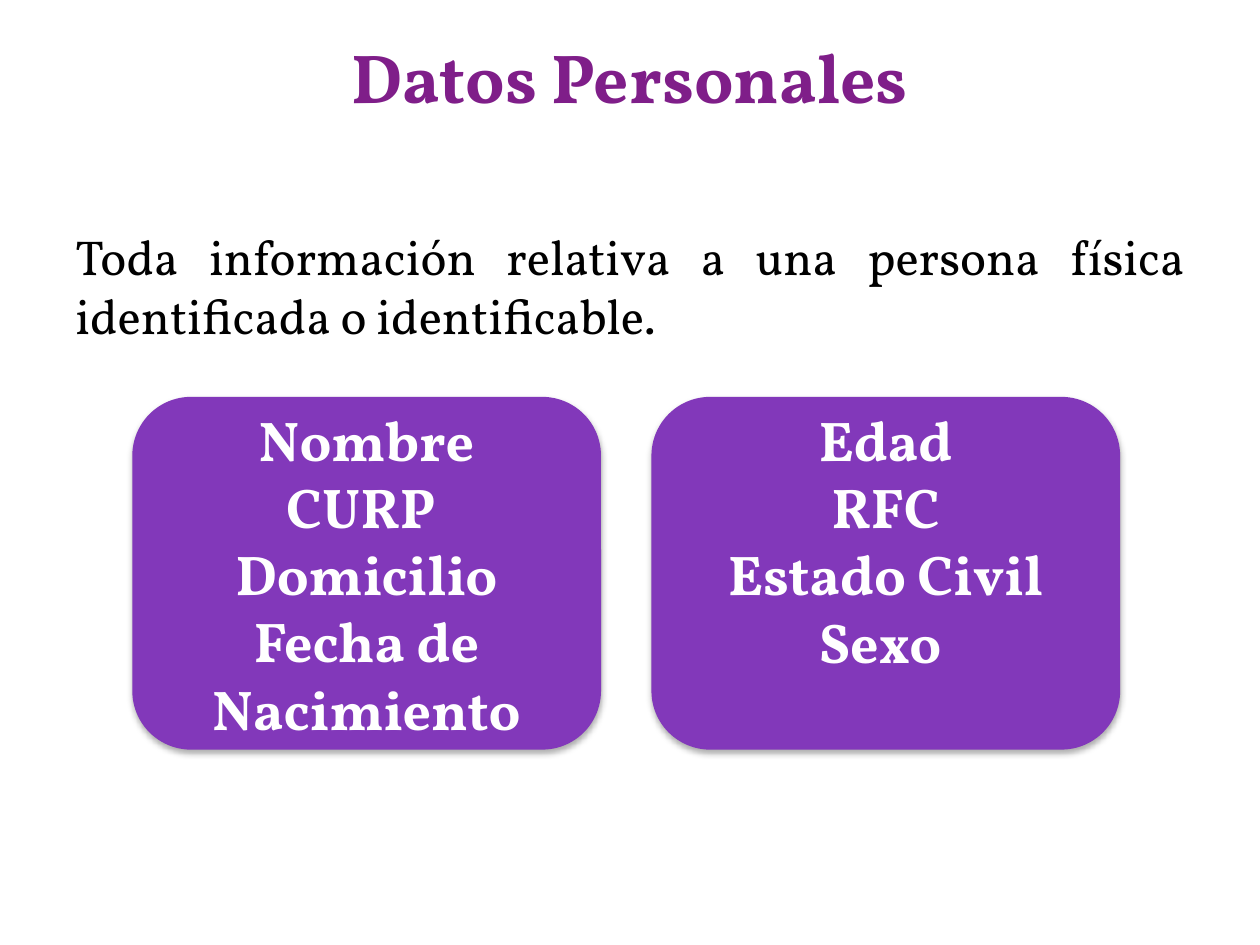
from lxml.etree import SubElement
from pptx import Presentation
from pptx.dml.color import RGBColor
from pptx.enum.shapes import MSO_SHAPE
from pptx.enum.text import MSO_ANCHOR, PP_ALIGN
from pptx.oxml.ns import qn
from pptx.util import Inches, Pt

FONT = "Vollkorn"
TITLE = "Datos Personales"
DEFINITION = "Toda información relativa a una persona física identificada o identificable."
CARDS = [
    ["Nombre", "CURP ", "Domicilio", "Fecha de Nacimiento"],
    ["Edad", "RFC", "Estado Civil", "Sexo "],
]
CARD_BOTTOM_MARGINS = [0.05, 0.58]
CARD_LEFT, CARD_TOP, CARD_WIDTH, CARD_HEIGHT, CARD_GAP = 1.05, 3.15, 3.72, 2.8, 0.4


def color(value):
    return RGBColor.from_string(value)


def write(text_frame, lines, size, font_color, bold, alignment):
    text_frame.word_wrap = True
    text_frame.text = "\n".join(lines)
    for paragraph in text_frame.paragraphs:
        paragraph.alignment = alignment
        for run in paragraph.runs:
            run.font.name = FONT
            run.font.size = Pt(size)
            run.font.bold = bold
            run.font.color.rgb = color(font_color)


def add_shadow(shape):
    shape.shadow.inherit = False
    effects = shape._element.spPr.find(qn("a:effectLst"))
    shadow = SubElement(effects, qn("a:outerShdw"), blurRad=str(Pt(3.5)),
                        dist=str(Pt(2.2)), dir=str(90 * 60000), rotWithShape="0")
    shadow_color = SubElement(shadow, qn("a:srgbClr"), val="000000")
    SubElement(shadow_color, qn("a:alpha"), val="32000")


def add_card(slide, index, lines):
    left = CARD_LEFT + index * (CARD_WIDTH + CARD_GAP)
    card = slide.shapes.add_shape(
        MSO_SHAPE.ROUNDED_RECTANGLE, Inches(left), Inches(CARD_TOP),
        Inches(CARD_WIDTH), Inches(CARD_HEIGHT))
    card.fill.solid()
    card.fill.fore_color.rgb = color("8238BA")
    card.line.fill.background()
    add_shadow(card)
    card.text_frame.vertical_anchor = MSO_ANCHOR.MIDDLE
    card.text_frame.margin_bottom = Inches(CARD_BOTTOM_MARGINS[index])
    write(card.text_frame, lines, 32, "FFFFFF", True, PP_ALIGN.CENTER)


def main():
    presentation = Presentation()
    presentation.slide_width = Inches(10)
    presentation.slide_height = Inches(7.5)
    slide = presentation.slides.add_slide(presentation.slide_layouts[6])

    title = slide.shapes.add_textbox(Inches(0.5), Inches(0.27), Inches(9), Inches(1.25))
    title.text_frame.margin_top = 0
    write(title.text_frame, [TITLE], 39.6, "7F1E89", True, PP_ALIGN.CENTER)

    definition = slide.shapes.add_textbox(Inches(0.5), Inches(1.75), Inches(9), Inches(4.95))
    write(definition.text_frame, [DEFINITION], 28, "000000", False, PP_ALIGN.JUSTIFY)

    for index, lines in enumerate(CARDS):
        add_card(slide, index, lines)

    presentation.save("out.pptx")


if __name__ == "__main__":
    main()
